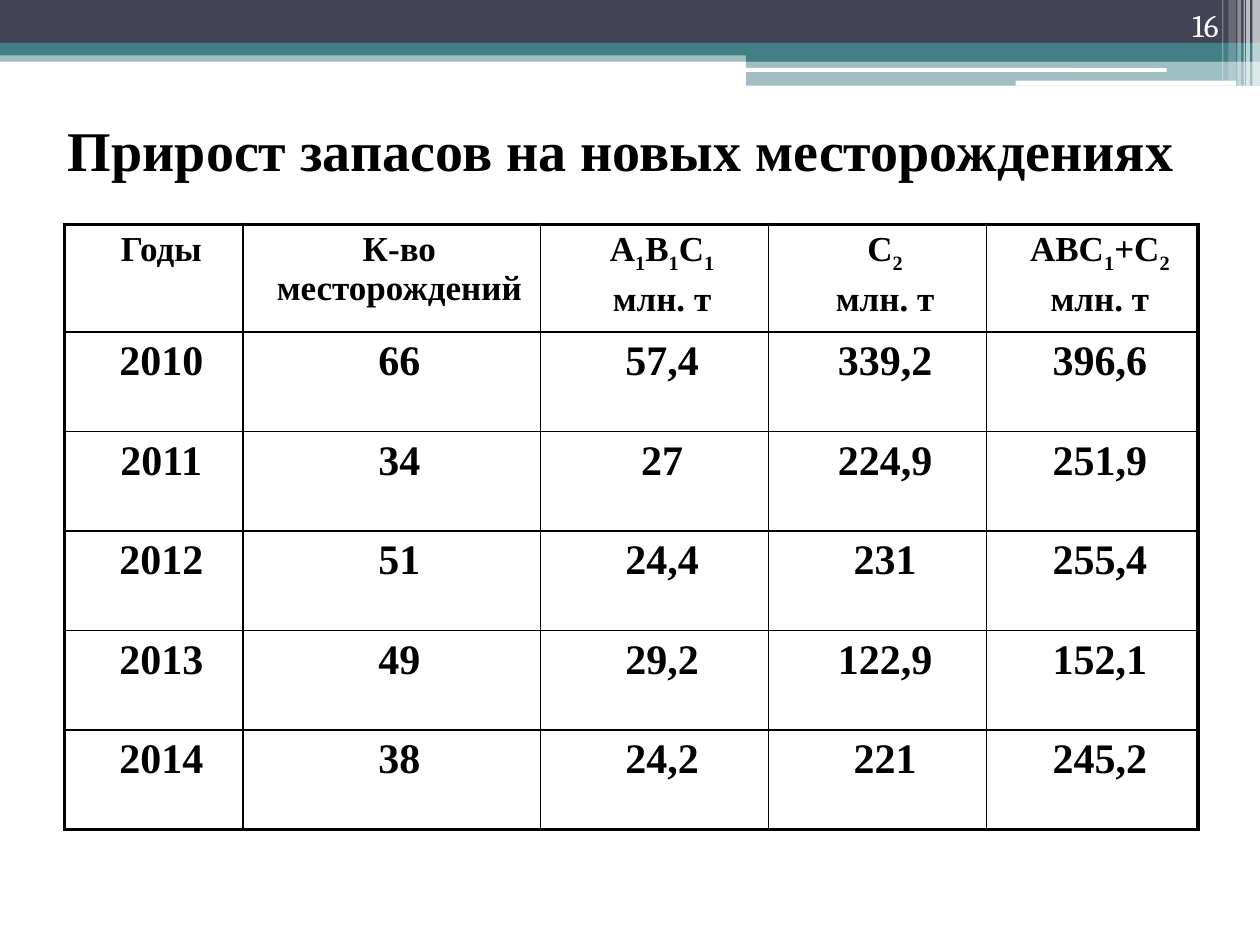
"""Builds the slide on reserve growth at new deposits."""
from lxml.etree import SubElement
from pptx import Presentation
from pptx.dml.color import RGBColor
from pptx.enum.shapes import MSO_SHAPE
from pptx.enum.text import MSO_ANCHOR, PP_ALIGN
from pptx.oxml.ns import qn
from pptx.util import Inches, Pt

NAVY, TEAL, WHITE, BLACK = "424456", "438086", "FFFFFF", "000000"
SERIF = "Times New Roman"
BARS = [
    (0, 0.4, 10, 0.09, TEAL, 50),
    (0, 0, 10, 0.34, NAVY, 100),
    (0, 0.34, 10, 0.1, TEAL, 100),
    (5.92, 0.39, 4.08, 0.1, TEAL, 100),
    (5.92, 0.48, 4.08, 0.2, TEAL, 50),
]
GROOVES = [(5.91, 0.54, 3.35, 0.03), (8.06, 0.64, 1.75, 0.04)]
STRIPES = [
    (9.94, 0.06, 0.68, 65),
    (9.89, 0.03, 0.68, 65),
    (9.87, 0.01, 0.68, 60),
    (9.82, 0.03, 0.68, 40),
    (9.75, 0.06, 0.64, 20),
    (9.7, 0.01, 0.64, 30),
]
COL_WIDTHS = [1.42, 2.36, 1.81, 1.73, 1.68]
ROW_HEIGHT = 0.79
ROWS = [
    ["Годы", "К-во месторождений", "А_1_В_1_С_1\nмлн. т", "С_2\nмлн. т", "АВС_1_+С_2\nмлн. т"],
    ["2010", "66", "57,4", "339,2", "396,6"],
    ["2011", "34", "27", "224,9", "251,9"],
    ["2012", "51", "24,4", "231", "255,4"],
    ["2013", "49", "29,2", "122,9", "152,1"],
    ["2014", "38", "24,2", "221", "245,2"],
]


def rgb(value):
    return RGBColor.from_string(value)


class Deck:
    def __init__(self, slide):
        self.s = slide

    def style(self, p, size, font=SERIF, color=BLACK, bold=True, align=PP_ALIGN.CENTER):
        p.alignment = align
        p.font.size, p.font.name, p.font.bold = Pt(size), font, bold
        p.font.color.rgb = rgb(color)

    def bar(self, x, y, w, h, color, opacity=100, kind=MSO_SHAPE.RECTANGLE):
        sp = self.s.shapes.add_shape(kind, Inches(x), Inches(y), Inches(w), Inches(h))
        sp.shadow.inherit = False
        sp.fill.solid()
        sp.fill.fore_color.rgb = rgb(color)
        sp.line.fill.background()
        if opacity < 100:
            clr = sp.fill._xPr.find(".//" + qn("a:srgbClr"))
            SubElement(clr, qn("a:alpha"), val=str(opacity * 1000))

    def text(self, x, y, w, h, text, size, anchor, **style):
        tf = self.s.shapes.add_textbox(Inches(x), Inches(y), Inches(w), Inches(h)).text_frame
        tf.word_wrap, tf.vertical_anchor = True, anchor
        p = tf.paragraphs[0]
        p.text = text
        self.style(p, size, **style)

    def borders(self, cell, widths):
        tc_pr = cell._tc.get_or_add_tcPr()
        for side, width in zip("LRTB", widths):
            ln = SubElement(tc_pr, qn("a:ln" + side), w=str(Pt(width)))
            SubElement(SubElement(ln, qn("a:solidFill")), qn("a:srgbClr"), val=BLACK)

    def cell_text(self, cell, text, size):
        tf = cell.text_frame
        for i, line in enumerate(text.split("\n")):
            p = tf.add_paragraph() if i else tf.paragraphs[0]
            self.style(p, size)
            p.space_before = Pt(3)
            p._p.get_or_add_pPr().set("marL", str(Inches(0.12)))
            p._p.get_or_add_pPr().set("indent", "0")
            for j, part in enumerate(line.split("_")):
                r = p.add_run()
                r.text = part
                if j % 2:
                    r.font._element.set("baseline", "-25000")

    def table(self, x, y, widths, row_height, rows):
        last_row, last_col = len(rows) - 1, len(widths) - 1
        table = self.s.shapes.add_table(
            len(rows), len(widths), Inches(x), Inches(y),
            Inches(sum(widths)), Inches(row_height * len(rows))).table
        table.first_row = table.horz_banding = False
        for column, width in zip(table.columns, widths):
            column.width = Inches(width)
        for i, row in enumerate(rows):
            table.rows[i].height = Inches(row_height)
            for j, text in enumerate(row):
                cell = table.cell(i, j)
                edges = (j == 0, j == last_col, i == 0, i == last_row)
                self.borders(cell, [2.25 if edge else 1 for edge in edges])
                cell.fill.background()
                self.cell_text(cell, text, 24 if i else 20)


def main():
    prs = Presentation()
    prs.slide_width, prs.slide_height = Inches(10), Inches(7.5)
    deck = Deck(prs.slides.add_slide(prs.slide_layouts[6]))
    for bar in BARS:
        deck.bar(*bar)
    for groove in GROOVES:
        deck.bar(*groove, WHITE, kind=MSO_SHAPE.ROUNDED_RECTANGLE)
    for x, w, h, opacity in STRIPES:
        deck.bar(x, 0, w, h, WHITE, opacity)
    deck.text(8.94, 0, 0.83, 0.4, "16", 18, MSO_ANCHOR.BOTTOM,
              font="Cambria", color=WHITE, bold=False, align=PP_ALIGN.RIGHT)
    deck.text(0.43, 0.6, 9, 1.17, "Прирост запасов на новых месторождениях", 32, MSO_ANCHOR.MIDDLE)
    deck.table(0.51, 1.78, COL_WIDTHS, ROW_HEIGHT, ROWS)
    prs.save("out.pptx")


if __name__ == "__main__":
    main()
